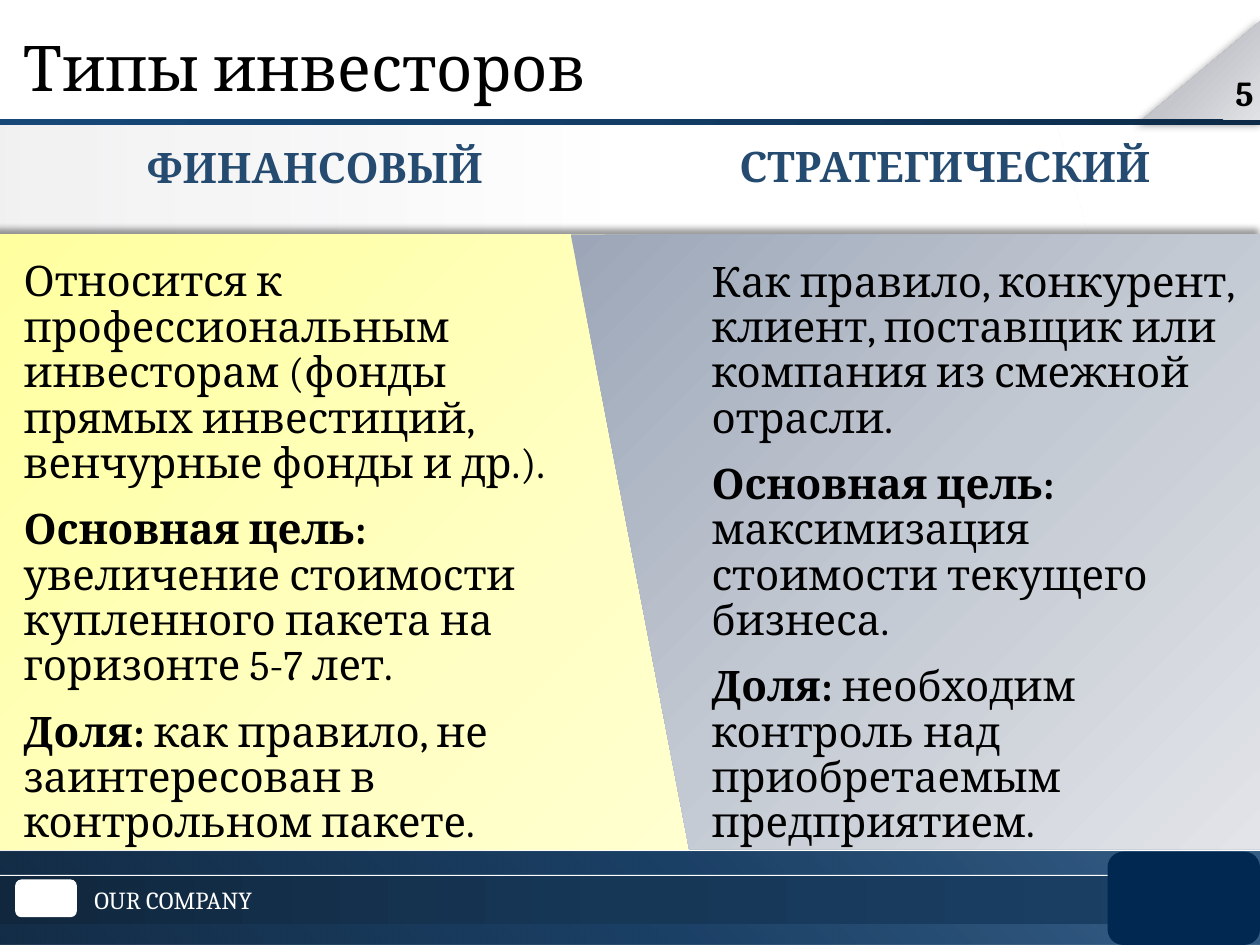
from pptx import Presentation
from pptx.dml.color import RGBColor
from pptx.enum.shapes import MSO_SHAPE
from pptx.enum.text import MSO_ANCHOR, MSO_AUTO_SIZE, PP_ALIGN
from pptx.oxml import parse_xml
from pptx.oxml.ns import nsdecls, qn
from pptx.util import Inches, Pt

BLACK = RGBColor(0x00, 0x00, 0x00)
WHITE = RGBColor(0xFF, 0xFF, 0xFF)
BLUE = RGBColor(0x25, 0x4B, 0x71)
NAVY = RGBColor(0x00, 0x28, 0x50)

TITLE = "Типы инвесторов"
PAGE = "5"
BRAND = "OUR COMPANY"
HEADS = [
    ("ФИНАНСОВЫЙ", (0, 1.07, 5, 0.59)),
    ("СТРАТЕГИЧЕСКИЙ", (5, 1.07, 5, 0.67)),
]
BODIES = [
    ((0.09, 2.02, 4.44, 4.57), [
        ("", "Относится к профессиональным инвесторам (фонды прямых инвестиций, "
             "венчурные фонды и др.)."),
        ("Основная цель: ", "увеличение стоимости купленного пакета на горизонте 5-7 лет."),
        ("Доля: ", "как правило, не заинтересован в контрольном пакете."),
    ]),
    ((5.55, 2.02, 4.51, 4.72), [
        ("", "Как правило, конкурент, клиент, поставщик или компания из смежной отрасли."),
        ("Основная цель: ", "максимизация стоимости текущего бизнеса."),
        ("Доля: ", "необходим контроль над приобретаемым предприятием."),
    ]),
]

PANEL = [(0, "FFFFFF", 100), (51, "FFFFFF", 100), (100, "EFEFF0", 84)]
STRIP = [(0, "132C46", 100), (50, "1A3F64", 100), (100, "1F4B77", 89)]
BAND = [(0, "10273D", 100), (50, "173757", 100), (100, "1B4167", 100)]
FOLD = [(0, "9DA2AB", 100), (50, "C4C6CB", 100), (100, "E2E3E6", 100)]
RULE = [(0, "0D2B47", 100), (50, "133D65", 100), (100, "174878", 100)]
YELLOW = [(0, "FFFFA0", 100), (50, "FFFFC5", 100), (100, "FFFFE3", 100)]
STEEL = [(0, "9CA6B8", 100), (50, "C3C9D2", 100), (100, "E2E4E9", 100)]

deck = Presentation()
deck.slide_width, deck.slide_height = Inches(10), Inches(7.5)
slide = deck.slides.add_slide(deck.slide_layouts[5])
shapes = slide.shapes


def clean(shape):
    shape.shadow.inherit = False
    shape.line.fill.background()
    return shape


def box(kind, at):
    return clean(shapes.add_shape(kind, *map(Inches, at)))


def poly(points):
    start, *rest = [(Inches(x), Inches(y)) for x, y in points]
    form = shapes.build_freeform(*start)
    form.add_line_segments(rest, close=True)
    return clean(form.convert_to_shape())


def grade(shape, stops, angle=None):
    shape.fill.gradient()
    old = shape._element.spPr.find(qn("a:gradFill"))
    marks = "".join(
        f'<a:gs pos="{pos * 1000}"><a:srgbClr val="{color}">'
        f'<a:alpha val="{alpha * 1000}"/></a:srgbClr></a:gs>'
        for pos, color, alpha in stops)
    if angle is None:
        way = '<a:path path="circle"><a:fillToRect t="100000" r="100000"/></a:path>'
    else:
        way = f'<a:lin ang="{angle * 60000}" scaled="0"/>'
    new = parse_xml(f'<a:gradFill {nsdecls("a")} rotWithShape="1">'
                    f'<a:gsLst>{marks}</a:gsLst>{way}</a:gradFill>')
    old.getparent().replace(old, new)


def shade(shape, blur, dist, angle):
    shape._element.spPr.find(qn("a:effectLst")).append(parse_xml(
        f'<a:outerShdw {nsdecls("a")} blurRad="{Pt(blur)}" dist="{Pt(dist)}" '
        f'dir="{angle * 60000}" algn="ctr" rotWithShape="0">'
        '<a:srgbClr val="000000"><a:alpha val="40000"/></a:srgbClr></a:outerShdw>'))


def style(run, size, color=BLACK, bold=False, face="Cambria"):
    for key, value in {"size": Pt(size), "bold": bold, "name": face}.items():
        setattr(run.font, key, value)
    run.font.color.rgb = color


def write(shape, paras, size, look=None, frame=None, **font):
    text = shape.text_frame
    base = {"word_wrap": True, "auto_size": MSO_AUTO_SIZE.NONE}
    for key, value in {**base, **(frame or {})}.items():
        setattr(text, key, value)
    for i, (lead, rest) in enumerate(paras):
        para = text.add_paragraph() if i else text.paragraphs[0]
        for key, value in (look or {}).items():
            setattr(para, key, value)
        for part, extra in ((lead, {"bold": True}), (rest, {})):
            if part:
                run = para.add_run()
                run.text = part
                style(run, size, **{**font, **extra})


def label(at, *args, **font):
    write(shapes.add_textbox(*map(Inches, at)), *args, **font)


grade(poly([(0, 0.98), (8.37, 0.98), (10, 6.77), (0, 6.77)]), PANEL, 180)
for top in (6.76, 7.32):
    grade(box(MSO_SHAPE.RECTANGLE, (0, top, 10, 0.18)), STRIP)
grade(box(MSO_SHAPE.RECTANGLE, (0, 6.95, 10, 0.38)), BAND, 0)

for at, color in (((8.79, 6.76, 1.21, 0.74), NAVY), ((0.12, 6.98, 0.49, 0.3), WHITE)):
    badge = box(MSO_SHAPE.ROUNDED_RECTANGLE, at)
    badge.fill.solid()
    badge.fill.fore_color.rgb = color
label((0.65, 6.95, 2, 0.38), [("", BRAND)], 14,
      frame={"vertical_anchor": MSO_ANCHOR.MIDDLE}, color=WHITE)

fold = box(MSO_SHAPE.ISOSCELES_TRIANGLE, (9.02, 0.17, 0.98, 0.82))
fold.adjustments[0] = 1
grade(fold, FOLD, 45)
shade(fold, 5, 0, 0)
grade(box(MSO_SHAPE.RECTANGLE, (0, 0.95, 10, 0.04)), RULE, 225)
label((9.33, 0.52, 0.67, 0.44), [("", PAGE)], 20, {"alignment": PP_ALIGN.RIGHT},
      {"margin_left": 0, "margin_right": Inches(0.05)}, bold=True)

title = shapes.title
for key, value in zip(("left", "top", "width", "height"), (0.09, 0.17, 7.24, 0.71)):
    setattr(title, key, Inches(value))
write(title, [("", TITLE)], 36, {"alignment": PP_ALIGN.LEFT},
      {"vertical_anchor": MSO_ANCHOR.MIDDLE})

left = box(MSO_SHAPE.RECTANGLE, (-0.12, 1.86, 10.12, 4.88))
grade(left, YELLOW, 45)
shade(left, 4, 3, 270)
grade(poly([(4.53, 1.86), (10, 1.86), (10, 6.74), (5.47, 6.74)]), STEEL, 45)

for head, at in HEADS:
    label(at, [("", head)], 24,
          {"alignment": PP_ALIGN.CENTER, "space_before": Pt(4.8)}, color=BLUE, bold=True)
for at, paras in BODIES:
    label(at, paras, 24,
          {"line_spacing": 0.9, "space_before": Pt(6), "space_after": Pt(6)})

deck.save("out.pptx")
